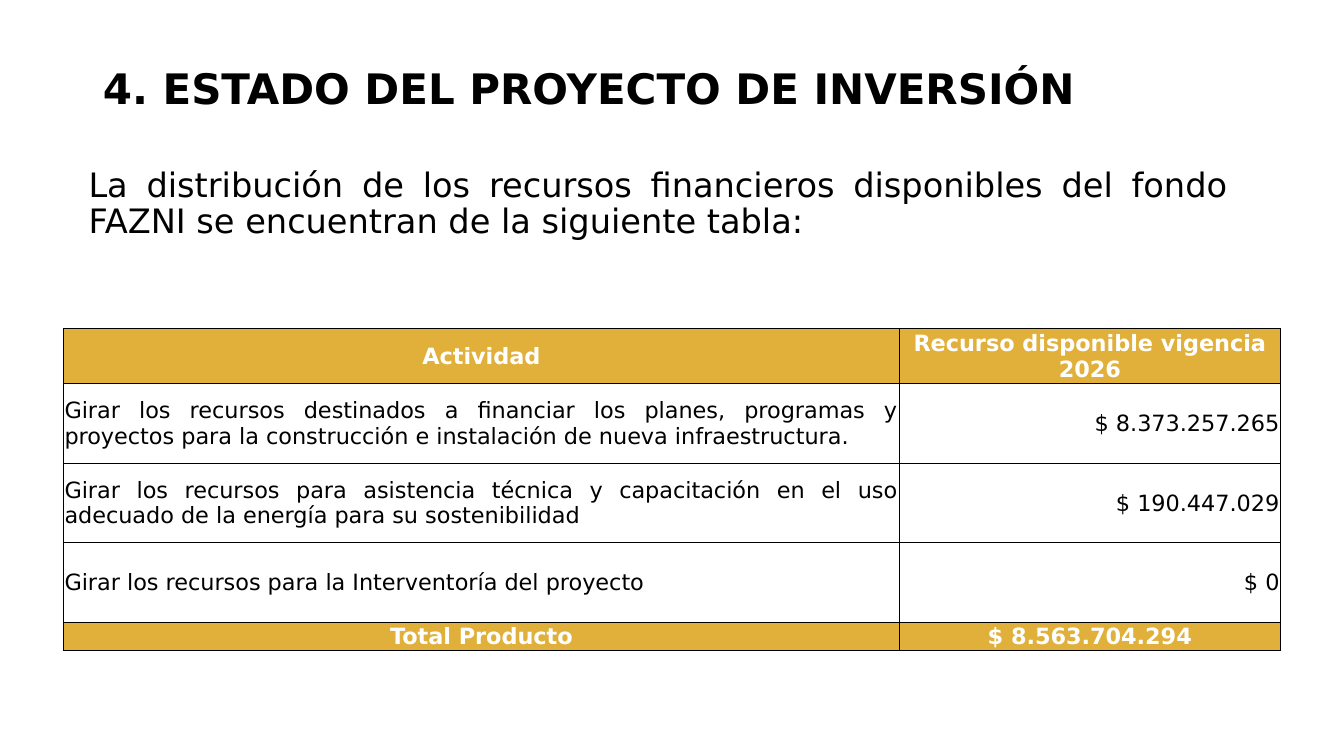
from lxml import etree
from pptx import Presentation
from pptx.dml.color import RGBColor
from pptx.enum import text
from pptx.oxml import ns
from pptx.util import Inches, Pt

FONT = "DejaVu Sans"
BLACK, WHITE, GOLD = "000000", "FFFFFF", "E1B03B"
LEFT, CENTER = text.PP_ALIGN.LEFT, text.PP_ALIGN.CENTER
RIGHT, JUSTIFY = text.PP_ALIGN.RIGHT, text.PP_ALIGN.JUSTIFY

COLUMN_WIDTHS = (8.29, 3.78)
HEADER_HEIGHT, ACTIVITY_HEIGHT, TOTAL_HEIGHT = 0.53, 0.79, 0.27
HEADER = ("Actividad", "Recurso disponible vigencia 2026")
ACTIVITIES = [
    ("Girar los recursos destinados a financiar los planes, programas y proyectos "
     "para la construcción e instalación de nueva infraestructura.", "$ 8.373.257.265"),
    ("Girar los recursos para asistencia técnica y capacitación en el uso adecuado "
     "de la energía para su sostenibilidad", "$ 190.447.029"),
    ("Girar los recursos para la Interventoría del proyecto", "$ 0"),
]
TOTAL = ("Total Producto", "$ 8.563.704.294")


def color(value):
    return RGBColor.from_string(value)


def write(frame, words, size, align, ink=BLACK, bold=False, spacing=None):
    frame.word_wrap = True
    para = frame.paragraphs[0]
    para.text = words
    para.alignment = align
    para.space_before = Pt(0)
    if spacing:
        para.line_spacing = spacing
    font = para.font
    font.name, font.size, font.bold = FONT, Pt(size), bold
    font.color.rgb = color(ink)


def add_title(page, words):
    title = page.shapes.title
    title.left, title.top = Inches(0.92), Inches(0.5)
    title.width, title.height = Inches(11.5), Inches(0.68)
    title.text_frame.vertical_anchor = text.MSO_ANCHOR.BOTTOM
    write(title.text_frame, words, 30, LEFT, bold=True, spacing=0.9)


def add_intro(page, words):
    box = page.shapes.add_textbox(Inches(0.78), Inches(1.62), Inches(11.5), Inches(1.64))
    write(box.text_frame, words, 24, JUSTIFY, spacing=0.9)


def add_borders(cell):
    properties = cell._tc.get_or_add_tcPr()
    for side in ("lnL", "lnR", "lnT", "lnB"):
        line = etree.SubElement(properties, ns.qn(f"a:{side}"), w=str(Pt(0.5)))
        fill = etree.SubElement(line, ns.qn("a:solidFill"))
        etree.SubElement(fill, ns.qn("a:srgbClr"), val=BLACK)


def fill_cell(cell, words, align, highlighted):
    cell.margin_left = cell.margin_right = cell.margin_top = Inches(0.01)
    cell.margin_bottom = 0
    cell.vertical_anchor = text.MSO_ANCHOR.MIDDLE
    add_borders(cell)
    if highlighted:
        cell.fill.solid()
        cell.fill.fore_color.rgb = color(GOLD)
    else:
        cell.fill.background()
    write(cell.text_frame, words, 16, align, WHITE if highlighted else BLACK, highlighted)


def add_resource_table(page):
    rows = [HEADER, *ACTIVITIES, TOTAL]
    heights = [HEADER_HEIGHT] + [ACTIVITY_HEIGHT] * len(ACTIVITIES) + [TOTAL_HEIGHT]
    table = page.shapes.add_table(
        len(rows), len(COLUMN_WIDTHS), Inches(0.63), Inches(3.26),
        Inches(sum(COLUMN_WIDTHS)), Inches(sum(heights))).table
    for column, width in zip(table.columns, COLUMN_WIDTHS):
        column.width = Inches(width)
    for index, (row, height) in enumerate(zip(rows, heights)):
        table.rows[index].height = Inches(height)
        highlighted = row in (HEADER, TOTAL)
        aligns = (CENTER, CENTER) if highlighted else (JUSTIFY, RIGHT)
        for cell, words, align in zip(table.rows[index].cells, row, aligns):
            fill_cell(cell, words, align, highlighted)


def main():
    deck = Presentation()
    deck.slide_width, deck.slide_height = Inches(13.33), Inches(7.5)
    page = deck.slides.add_slide(deck.slide_layouts[5])

    # Heading and introduction
    add_title(page, "4. ESTADO DEL PROYECTO DE INVERSIÓN")
    add_intro(page, "La distribución de los recursos financieros disponibles del fondo "
                    "FAZNI se encuentran de la siguiente tabla:")

    # Available resources by activity
    add_resource_table(page)

    deck.save("out.pptx")


if __name__ == "__main__":
    main()
